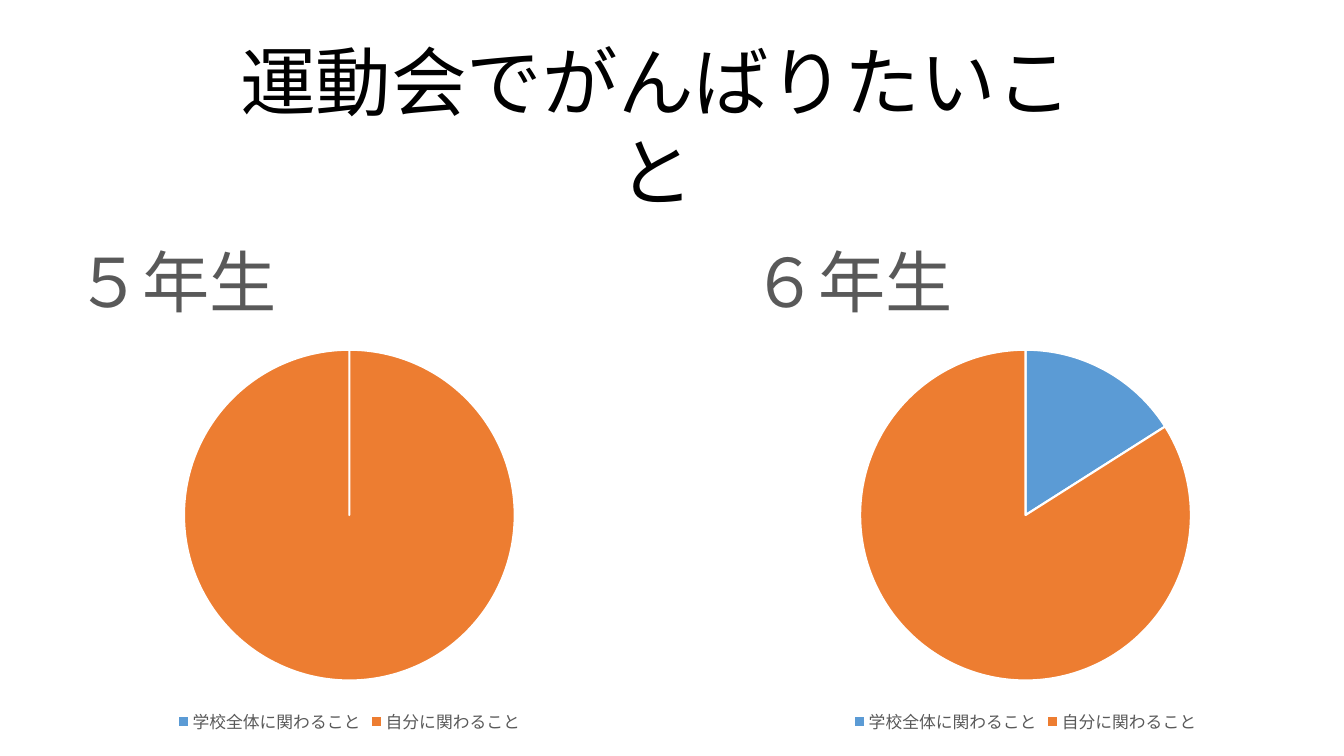
from dataclasses import dataclass

from lxml.etree import SubElement
from pptx import Presentation
from pptx.chart.data import CategoryChartData
from pptx.dml.color import RGBColor
from pptx.enum.chart import XL_CHART_TYPE, XL_LEGEND_POSITION
from pptx.enum.text import MSO_ANCHOR, MSO_AUTO_SIZE, PP_ALIGN
from pptx.oxml.ns import qn
from pptx.util import Cm, Pt


@dataclass(frozen=True)
class Theme:
    font: str = "Calibri"
    black: str = "000000"
    gray: str = "595959"
    white: str = "FFFFFF"
    slices: tuple = ("5B9BD5", "ED7D31")
    title_size: int = 54
    grade_size: int = 48
    legend_size: int = 12


theme = Theme()


def write_text(text_frame, text, size, color, align):
    paragraph = text_frame.paragraphs[0]
    paragraph.alignment = align
    run = paragraph.add_run()
    run.text = text
    run.font.name = theme.font
    run.font.size = Pt(size)
    run.font.bold = False
    run.font.color.rgb = RGBColor.from_string(color)


def place_in_chart(element, index, **fractions):
    """Give a chart part a manual position, as fractions of the chart."""
    for old_layout in element.findall(qn("c:layout")):
        element.remove(old_layout)
    layout = SubElement(element, qn("c:layout"))
    manual = SubElement(layout, qn("c:manualLayout"))
    if "w" in fractions:
        SubElement(manual, qn("c:layoutTarget")).set("val", "inner")
    for mode in ("xMode", "yMode"):
        SubElement(manual, qn(f"c:{mode}")).set("val", "edge")
    for name, value in fractions.items():
        SubElement(manual, qn(f"c:{name}")).set("val", str(value))
    element.insert(index, layout)


presentation = Presentation()
presentation.slide_width = Cm(33.87)
presentation.slide_height = Cm(19.05)
slide = presentation.slides.add_slide(presentation.slide_layouts[5])

# Title
title = slide.shapes.title
title.left, title.top, title.width, title.height = Cm(5.66), Cm(0.74), Cm(21.74), Cm(2.57)
title.text_frame.word_wrap = True
title.text_frame.auto_size = MSO_AUTO_SIZE.NONE
title.text_frame.vertical_anchor = MSO_ANCHOR.TOP
write_text(title.text_frame, "運動会でがんばりたいこと", theme.title_size, theme.black, PP_ALIGN.CENTER)

# One pie for each grade
goals = ("学校全体に関わること", "自分に関わること")
grades = (("５年生", 0.79, (0, 100)), ("６年生", 17.83, (16, 84)))

for grade, left, shares in grades:
    chart_data = CategoryChartData()
    chart_data.categories = goals
    chart_data.add_series("Series 1", shares)
    chart = slide.shapes.add_chart(
        XL_CHART_TYPE.PIE, Cm(left), Cm(4.57), Cm(16.03), Cm(14.02), chart_data
    ).chart
    chart.font.name = theme.font
    chart.font.size = Pt(theme.legend_size)

    # Grade heading
    chart.has_title = True
    write_text(chart.chart_title.text_frame, grade, theme.grade_size, theme.gray, PP_ALIGN.LEFT)
    chart_element = chart.element if hasattr(chart, "element") else chart._chartSpace
    place_in_chart(chart_element.find(f".//{qn('c:title')}"), 1, x=0.05, y=0.05)

    # Slices
    place_in_chart(chart_element.find(f".//{qn('c:plotArea')}"), 0, x=0.24, y=0.3, w=0.52, h=0.6)
    plot = chart.plots[0]
    plot.vary_by_categories = True
    for index, color in enumerate(theme.slices):
        point_format = plot.series[0].points[index].format
        point_format.fill.solid()
        point_format.fill.fore_color.rgb = RGBColor.from_string(color)
        point_format.line.color.rgb = RGBColor.from_string(theme.white)
        point_format.line.width = Pt(1.5)

    # Legend
    chart.has_legend = True
    chart.legend.position = XL_LEGEND_POSITION.BOTTOM
    chart.legend.include_in_layout = False
    chart.legend.font.name = theme.font
    chart.legend.font.size = Pt(theme.legend_size)
    chart.legend.font.color.rgb = RGBColor.from_string(theme.gray)

presentation.save("out.pptx")
